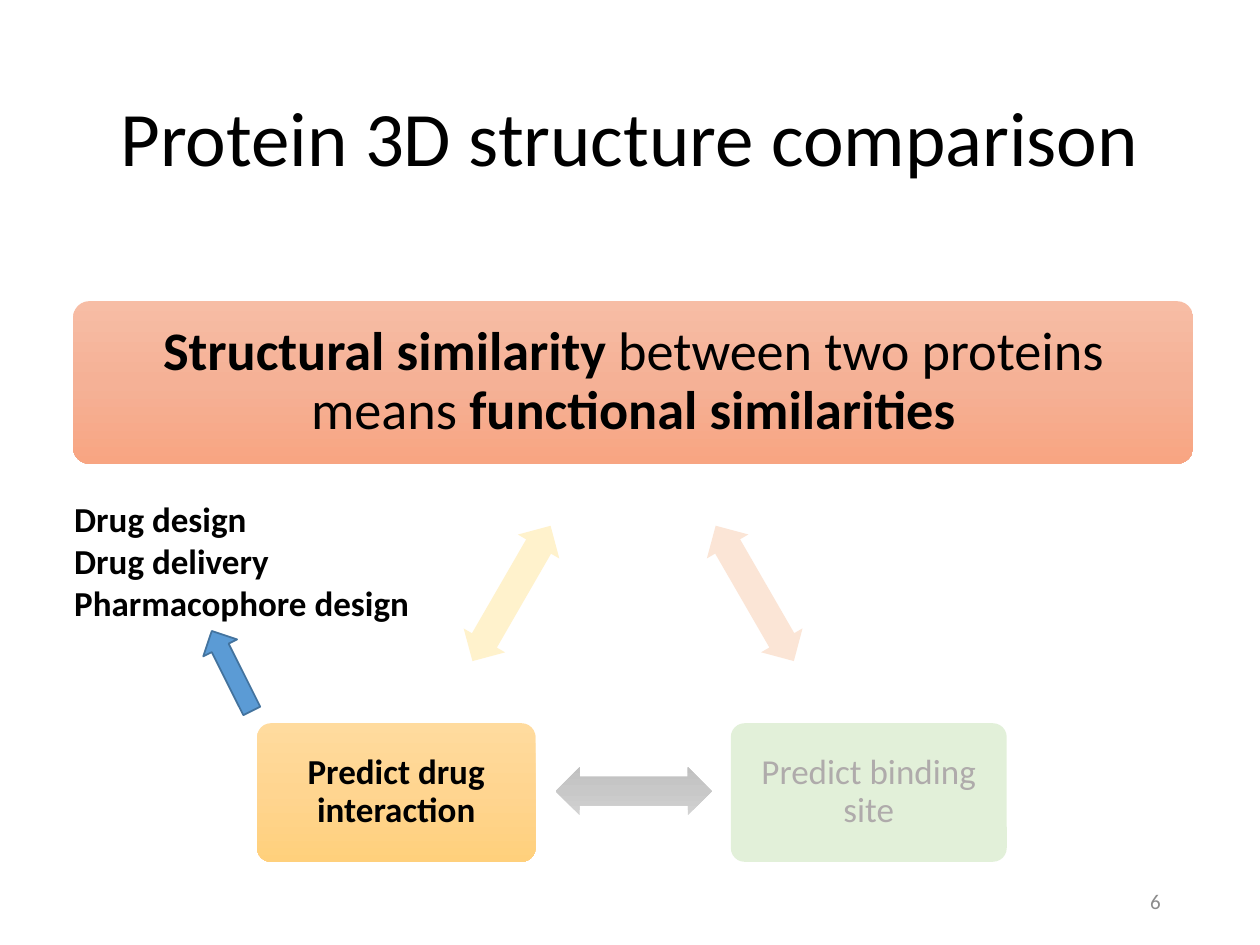
from copy import deepcopy

from pptx import Presentation
from pptx.dml.color import RGBColor
from pptx.enum.shapes import MSO_SHAPE
from pptx.enum.text import MSO_ANCHOR, PP_ALIGN
from pptx.util import Inches, Pt

FONT = "Calibri"
TITLE = "Protein 3D structure comparison"
USES = ["Drug design", "Drug delivery", "Pharmacophore design"]

# place, fill colours, inset, text size, text colour, runs as (text, bold)
BOXES = [
    ((0.58, 2.39, 8.89, 1.29), ["F7BDA5", "F5B196", "F8A582"], 0.16, 31, "000000",
     [("Structural similarity ", True), ("between two proteins means", False),
      (" functional similarities", True)]),
    ((5.8, 5.74, 2.19, 1.1), ["E2F0D9"], 0.11, 20, "AFABAB",
     [("Predict binding site", False)]),
    ((2.04, 5.74, 2.21, 1.1), ["FFDB9E", "FFD590", "FFD07C"], 0.11, 20, "000000",
     [("Predict drug interaction", True)]),
]

# left, top, rotation, fill colours
LINK_SIZE = (1.24, 0.38)
LINKS = [
    (5.37, 4.52, 60, ["FBE5D6"]),
    (4.41, 6.09, 180, ["D2D2D2", "C8C8C8", "C0C0C0"]),
    (3.44, 4.52, 300, ["FFF2CC"]),
]


def color(value):
    return RGBColor.from_string(value)


def paint(shape, colors):
    """Fill with one colour, or with a top-to-bottom gradient of three."""
    if len(colors) == 1:
        shape.fill.solid()
        shape.fill.fore_color.rgb = color(colors[0])
        return
    shape.fill.gradient()
    shape.fill.gradient_angle = 270
    first = shape.fill._fill._gradFill.gsLst[0]
    first.addnext(deepcopy(first))
    for index, stop in enumerate(shape.fill.gradient_stops):
        stop.position = index / (len(colors) - 1)
        stop.color.rgb = color(colors[index])


def add_shape(slide, kind, place, colors, rotation=0, adjustments=()):
    shape = slide.shapes.add_shape(kind, *map(Inches, place))
    shape.shadow.inherit = False
    shape.rotation = rotation
    for index, value in enumerate(adjustments):
        shape.adjustments[index] = value
    paint(shape, colors)
    shape.line.fill.background()
    return shape


def write(paragraph, runs, size, text_color, align):
    paragraph.alignment = align
    for text, bold in runs:
        span = paragraph.add_run()
        span.text = text
        span.font.name = FONT
        span.font.size = Pt(size)
        span.font.bold = bold
        span.font.color.rgb = color(text_color)


def add_text(slide, place, lines, size, text_color, align, bold=False):
    box = slide.shapes.add_textbox(*map(Inches, place))
    frame = box.text_frame
    frame.word_wrap = True
    for index, line in enumerate(lines):
        paragraph = frame.add_paragraph() if index else frame.paragraphs[0]
        write(paragraph, [(line, bold)], size, text_color, align)
    return frame


deck = Presentation()
deck.slide_width, deck.slide_height = Inches(10), Inches(7.5)
slide = deck.slides.add_slide(deck.slide_layouts[5])

title = slide.shapes.title
title.left, title.top, title.width, title.height = map(Inches, (0.69, 0.4, 8.62, 1.45))
title.text_frame.vertical_anchor = MSO_ANCHOR.MIDDLE
heading = title.text_frame.paragraphs[0]
heading.line_spacing = 0.9
write(heading, [(TITLE, False)], 44, "000000", PP_ALIGN.CENTER)

for place, colors, inset, size, text_color, runs in BOXES:
    box = add_shape(slide, MSO_SHAPE.ROUNDED_RECTANGLE, place, colors, adjustments=[0.1])
    frame = box.text_frame
    frame.word_wrap = True
    frame.vertical_anchor = MSO_ANCHOR.MIDDLE
    frame.margin_left = frame.margin_right = Inches(inset)
    frame.margin_top = frame.margin_bottom = Inches(inset)
    frame.paragraphs[0].line_spacing = 0.9
    write(frame.paragraphs[0], runs, size, text_color, PP_ALIGN.CENTER)

for left, top, rotation, colors in LINKS:
    add_shape(slide, MSO_SHAPE.LEFT_RIGHT_ARROW, (left, top, *LINK_SIZE), colors,
              rotation, [0.6, 0.5])

add_text(slide, (0.49, 3.9, 3.11, 1.11), USES, 20, "000000", PP_ALIGN.LEFT, bold=True)
use_arrow = add_shape(slide, MSO_SHAPE.UP_ARROW, (1.69, 4.97, 0.3, 0.71), ["5B9BD5"], 333.4)
use_arrow.line.color.rgb = color("43739E")
use_arrow.line.width = Pt(1)

number = add_text(slide, (7.06, 6.95, 2.25, 0.4), ["6"], 12, "8C8C8C", PP_ALIGN.RIGHT)
number.vertical_anchor = MSO_ANCHOR.MIDDLE

deck.save("out.pptx")
